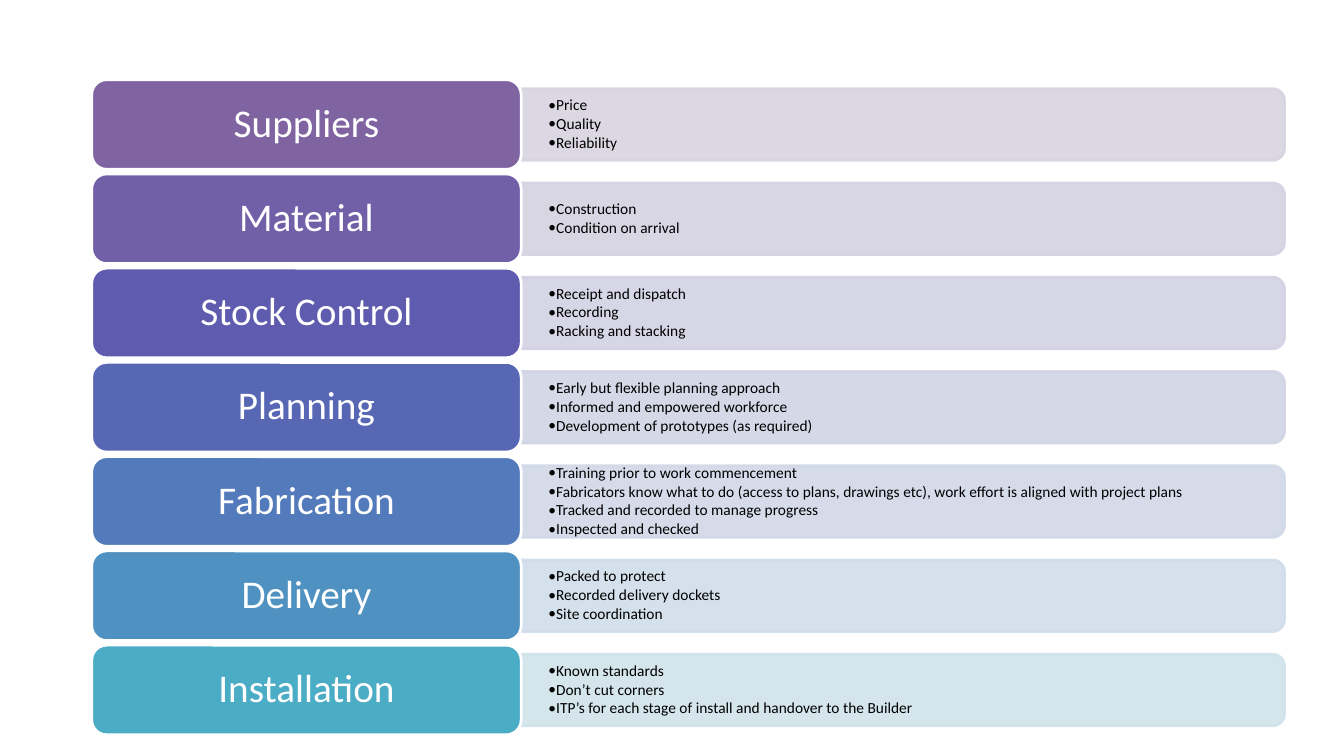
from dataclasses import dataclass

from lxml import etree
from pptx import Presentation
from pptx.dml.color import RGBColor
from pptx.enum.shapes import MSO_SHAPE
from pptx.enum.text import MSO_ANCHOR, PP_ALIGN
from pptx.oxml.ns import qn
from pptx.util import Inches, Pt

ROUNDED = MSO_SHAPE.ROUNDED_RECTANGLE
ROUND_TOP = MSO_SHAPE.ROUND_2_SAME_RECTANGLE
MIDDLE = MSO_ANCHOR.MIDDLE
CENTER = PP_ALIGN.CENTER

FONT = "Calibri"
WHITE = RGBColor(0xFF, 0xFF, 0xFF)
BLACK = RGBColor(0x00, 0x00, 0x00)

FIRST_TOP, LAST_TOP = 0.79, 6.4
LABEL_LEFT, LABEL_W, LABEL_H = 0.91, 4.26, 0.89
PANEL_LEFT, PANEL_W, PANEL_H = LABEL_LEFT + LABEL_W, 7.57, 0.71
POINTS_W, POINTS_H = 7.54, 0.64
BULLET_INDENT = 0.06
PANEL_ALPHA = 90


@dataclass(frozen=True)
class Stage:
    name: str
    color: RGBColor
    tint: RGBColor
    points: tuple[str, ...]


STAGES = (
    Stage("Suppliers", RGBColor(0x80, 0x64, 0xA2), RGBColor(0xD8, 0xD3, 0xE0),
          ("Price", "Quality", "Reliability")),
    Stage("Material", RGBColor(0x71, 0x60, 0xA8), RGBColor(0xD5, 0xD2, 0xE2),
          ("Construction", "Condition on arrival")),
    Stage("Stock Control", RGBColor(0x5F, 0x5B, 0xAE), RGBColor(0xD2, 0xD2, 0xE4),
          ("Receipt and dispatch", "Recording", "Racking and stacking")),
    Stage("Planning", RGBColor(0x57, 0x67, 0xB4), RGBColor(0xD1, 0xD4, 0xE5),
          ("Early but flexible planning approach",
           "Informed and empowered workforce",
           "Development of prototypes (as required)")),
    Stage("Fabrication", RGBColor(0x53, 0x7A, 0xBA), RGBColor(0xD1, 0xD8, 0xE7),
          ("Training prior to work commencement",
           "Fabricators know what to do (access to plans, drawings etc), "
           "work effort is aligned with project plans",
           "Tracked and recorded to manage progress",
           "Inspected and checked")),
    Stage("Delivery", RGBColor(0x4F, 0x91, 0xC0), RGBColor(0xD0, 0xDD, 0xE9),
          ("Packed to protect", "Recorded delivery dockets", "Site coordination")),
    Stage("Installation", RGBColor(0x4B, 0xAC, 0xC6), RGBColor(0xD0, 0xE3, 0xEA),
          ("Known standards", "Don’t cut corners",
           "ITP’s for each stage of install and handover to the Builder")),
)


def set_all(target, values: dict) -> None:
    for name, value in values.items():
        setattr(target, name, value)


def add_box(s, kind, left: float, top: float, width: float, height: float,
            fill: RGBColor, line: RGBColor):
    sp = s.shapes.add_shape(kind, Inches(left), Inches(top), Inches(width), Inches(height))
    sp.shadow.inherit = False
    sp.fill.solid()
    sp.fill.fore_color.rgb = fill
    sp.line.color.rgb = line
    sp.line.width = Pt(2)
    return sp


def set_frame(tf, inset_x: float, inset_y: float) -> None:
    set_all(tf, {"word_wrap": True, "vertical_anchor": MIDDLE,
                 "margin_left": Inches(inset_x), "margin_right": Inches(inset_x),
                 "margin_top": Inches(inset_y), "margin_bottom": Inches(inset_y)})


def add_run(p, text: str, size: float, color: RGBColor) -> None:
    p.line_spacing = 0.9
    r = p.add_run()
    r.text = text
    set_all(r.font, {"name": FONT, "size": Pt(size)})
    r.font.color.rgb = color


def add_bullet(p) -> None:
    pPr = p._p.get_or_add_pPr()
    pPr.set("marL", str(Inches(BULLET_INDENT)))
    pPr.set("indent", str(-Inches(BULLET_INDENT)))
    etree.SubElement(pPr, qn("a:buFont")).set("typeface", FONT)
    etree.SubElement(pPr, qn("a:buChar")).set("char", "•")


def add_panel(s, stage: Stage, middle: float) -> None:
    """Draw the tinted bar, turned so that its rounded end faces right."""
    center = PANEL_LEFT + PANEL_W / 2
    sp = add_box(s, ROUND_TOP, center - PANEL_H / 2, middle - PANEL_W / 2,
                 PANEL_H, PANEL_W, stage.tint, stage.tint)
    sp.rotation = 90
    for color in sp._element.spPr.iter(qn("a:srgbClr")):
        etree.SubElement(color, qn("a:alpha")).set("val", str(PANEL_ALPHA * 1000))


def add_points(s, stage: Stage, middle: float) -> None:
    tf = s.shapes.add_textbox(Inches(PANEL_LEFT), Inches(middle - POINTS_H / 2),
                              Inches(POINTS_W), Inches(POINTS_H)).text_frame
    set_frame(tf, 0.27, 0.14)
    for i, point in enumerate(stage.points):
        p = tf.add_paragraph() if i else tf.paragraphs[0]
        set_all(p, {"level": 1, "space_after": Pt(1.6)})
        add_run(p, point, 11, BLACK)
        add_bullet(p)


def add_label(s, stage: Stage, top: float) -> None:
    sp = add_box(s, ROUNDED, LABEL_LEFT, top, LABEL_W, LABEL_H, stage.color, WHITE)
    set_frame(sp.text_frame, 0.16, 0.1)
    p = sp.text_frame.paragraphs[0]
    p.alignment = CENTER
    add_run(p, stage.name, 28, WHITE)


def main() -> None:
    prs = Presentation()
    set_all(prs, {"slide_width": Inches(13.33), "slide_height": Inches(7.5)})
    s = prs.slides.add_slide(prs.slide_layouts[6])
    pitch = (LAST_TOP - FIRST_TOP) / (len(STAGES) - 1)
    for i, stage in enumerate(STAGES):
        top = FIRST_TOP + i * pitch
        middle = top + LABEL_H / 2
        add_panel(s, stage, middle)
        add_points(s, stage, middle)
        add_label(s, stage, top)
    prs.save("out.pptx")


if __name__ == "__main__":
    main()
